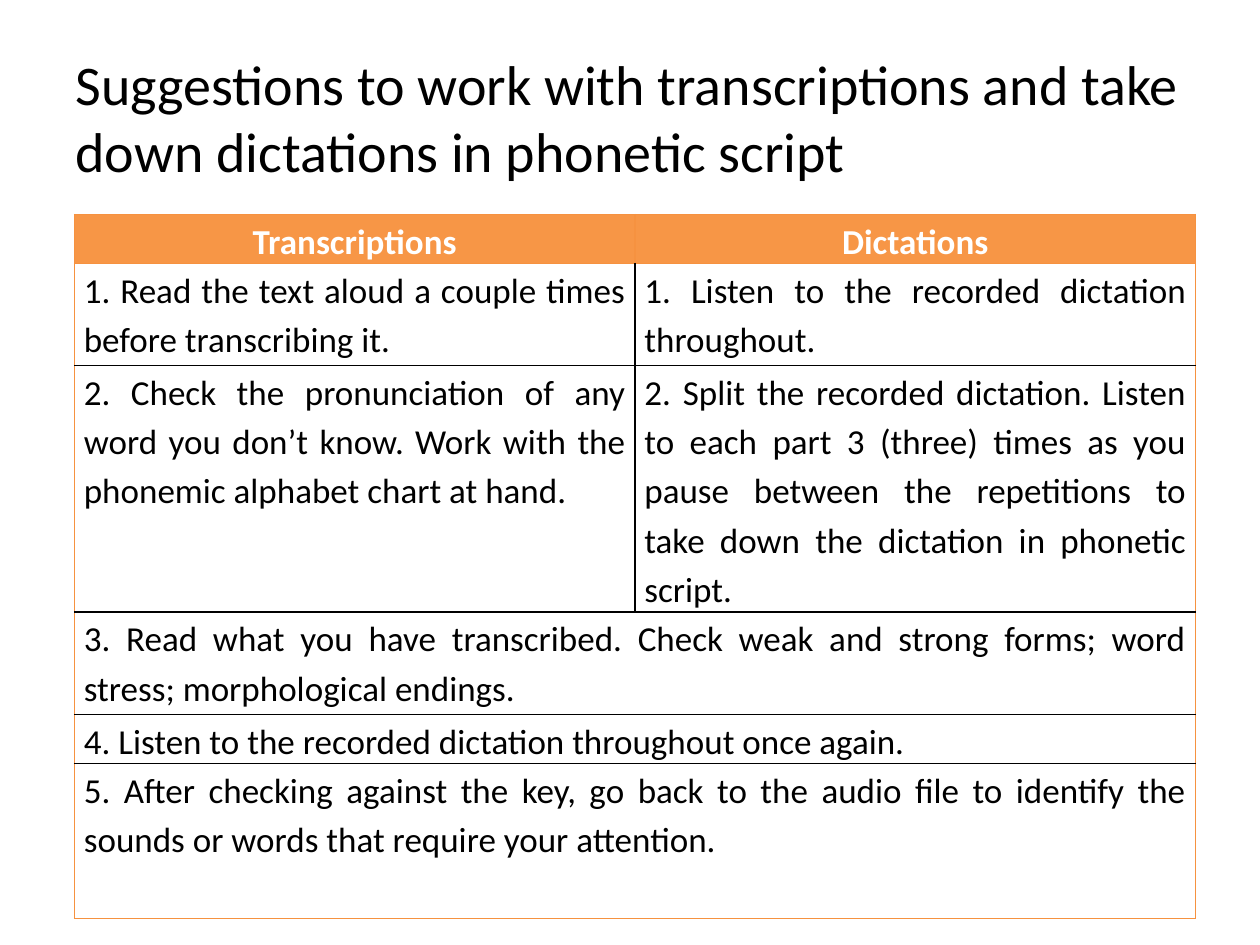
"""Build a slide with suggestions for transcriptions and phonetic dictations."""
from lxml.etree import SubElement
from pptx import Presentation
from pptx.dml.color import RGBColor
from pptx.enum.text import MSO_ANCHOR as Anchor, PP_ALIGN as Align
from pptx.oxml import parse_xml
from pptx.oxml.ns import nsdecls, qn
from pptx.util import Cm, Pt

TITLE = "Suggestions to work with transcriptions and take down dictations in phonetic script"
ROWS = [
    (0.99, ["Transcriptions", "Dictations"]),
    (2.06, ["1. Read the text aloud a couple times before transcribing it.",
            "1. Listen to the recorded dictation throughout."]),
    (4.97, ["2. Check the pronunciation of any word you don’t know. "
            "Work with the phonemic alphabet chart at hand.",
            "2. Split the recorded dictation. Listen to each part 3 (three) times as you "
            "pause between the repetitions to take down the dictation in phonetic script."]),
    (2.06, ["3. Read what you have transcribed. Check weak and strong forms; "
            "word stress; morphological endings."]),
    (0.99, ["4. Listen to the recorded dictation throughout once again."]),
    (3.12, ["5. After checking against the key, go back to the audio file to identify "
            "the sounds or words that require your attention."]),
]
COLUMN_WIDTH = 11.3
BLACK = RGBColor(0x00, 0x00, 0x00)
WHITE = RGBColor(0xFF, 0xFF, 0xFF)
ORANGE = RGBColor(0xF7, 0x96, 0x46)
BORDER_ORANGE = RGBColor(0xF6, 0x92, 0x40)


def write(frame, text, size=20, color=BLACK, bold=False, align=Align.JUSTIFY, spacing=1.15):
    paragraph = frame.paragraphs[0]
    paragraph.alignment = align
    paragraph.line_spacing = spacing
    run = paragraph.add_run()
    run.text = text
    run.font.name = "Calibri"
    run.font.size = Pt(size)
    run.font.bold = bold
    run.font.color.rgb = color


def set_borders(cell, colors):
    properties = cell._tc.get_or_add_tcPr()
    for index, (side, color) in enumerate(zip("LRTB", colors)):
        width = Pt(1) if color == BLACK else Pt(0.75)
        line = parse_xml(f'<a:ln{side} {nsdecls("a")} w="{width}"/>')
        fill = SubElement(line, qn("a:solidFill"))
        SubElement(fill, qn("a:srgbClr"), val=str(color))
        properties.insert(index, line)


def add_title(slide):
    box = slide.shapes.add_textbox(Cm(1.27), Cm(0.76), Cm(22.86), Cm(3.18))
    box.text_frame.word_wrap = True
    box.text_frame.vertical_anchor = Anchor.MIDDLE
    write(box.text_frame, TITLE, size=32, align=Align.LEFT, spacing=1)


def add_suggestions(slide):
    height = sum(row_height for row_height, _ in ROWS)
    table = slide.shapes.add_table(
        len(ROWS), 2, Cm(1.5), Cm(4.32), Cm(2 * COLUMN_WIDTH), Cm(height)).table
    table.first_row = table.horz_banding = False
    for column in table.columns:
        column.width = Cm(COLUMN_WIDTH)
    for row, (row_height, texts) in enumerate(ROWS):
        table.rows[row].height = Cm(row_height)
        header = row == 0
        merged = len(texts) == 1
        inner = BORDER_ORANGE if header or merged else BLACK
        top = BORDER_ORANGE if row <= 1 else BLACK
        bottom = BORDER_ORANGE if header or row == len(ROWS) - 1 else BLACK
        for column in range(2):
            cell = table.cell(row, column)
            cell.margin_left = cell.margin_right = Cm(0.19)
            cell.margin_top = cell.margin_bottom = Cm(0)
            cell.fill.solid()
            cell.fill.fore_color.rgb = ORANGE if header else WHITE
            sides = (BORDER_ORANGE, inner) if column == 0 else (inner, BORDER_ORANGE)
            set_borders(cell, (*sides, top, bottom))
        if merged:
            table.cell(row, 0).merge(table.cell(row, 1))
        for column, text in enumerate(texts):
            write(table.cell(row, column).text_frame, text, bold=header,
                  color=WHITE if header else BLACK,
                  align=Align.CENTER if header else Align.JUSTIFY)


def main():
    presentation = Presentation()
    presentation.slide_width = Cm(25.4)
    presentation.slide_height = Cm(19.05)
    slide = presentation.slides.add_slide(presentation.slide_layouts[6])
    add_title(slide)
    add_suggestions(slide)
    presentation.save("out.pptx")


if __name__ == "__main__":
    main()
